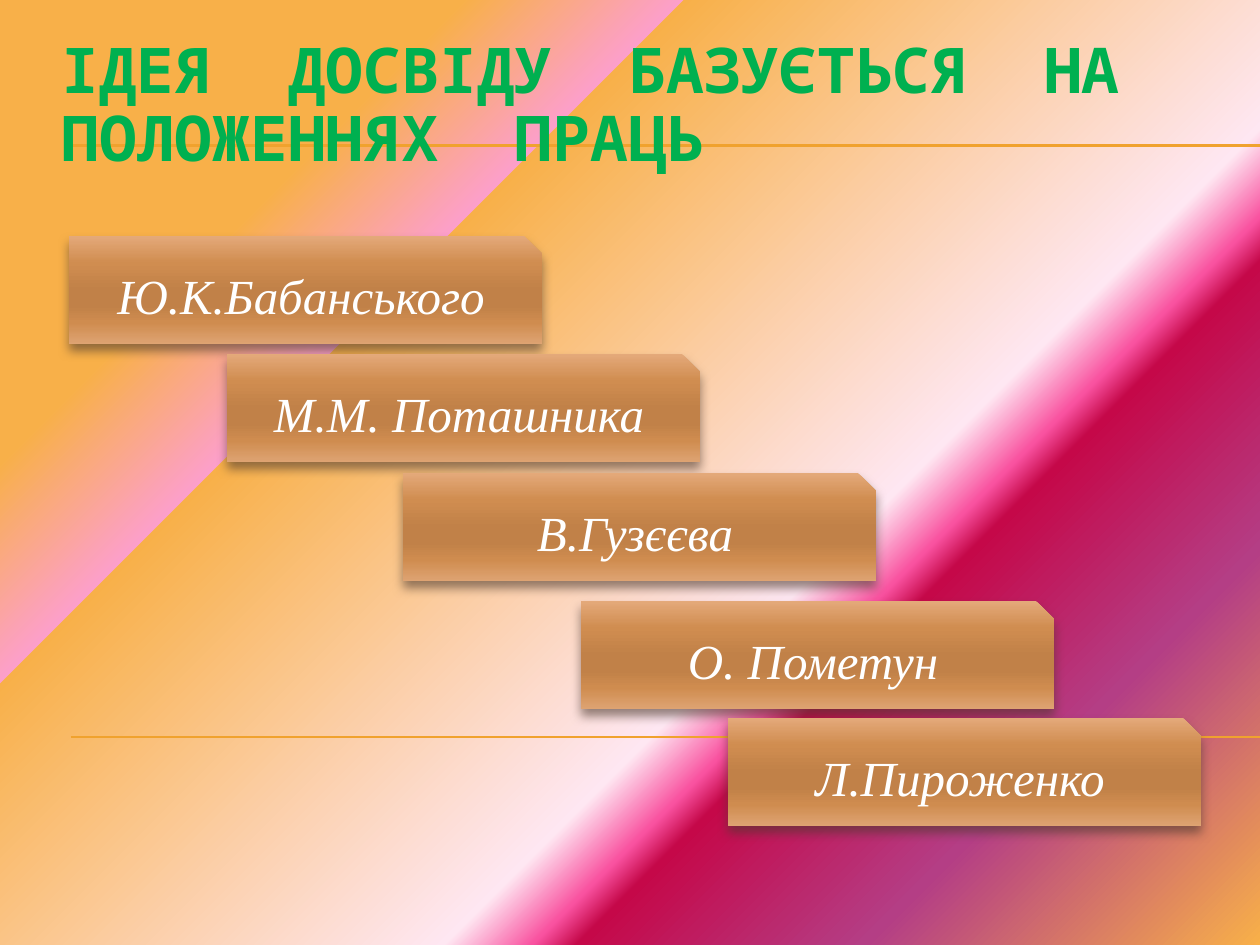
from dataclasses import dataclass

from lxml.etree import SubElement
from pptx import Presentation
from pptx.dml.color import RGBColor as Rgb
from pptx.enum.shapes import MSO_CONNECTOR as Link, MSO_SHAPE as Form
from pptx.enum.text import MSO_ANCHOR as Anchor, PP_ALIGN as Align
from pptx.oxml.ns import qn
from pptx.util import Emu, Pt


@dataclass(frozen=True)
class Theme:
    """Colours, fonts and type sizes of the slide."""
    head: str = "00B050"
    name: str = "FFFFFF"
    rule: str = "F0A22E"
    shade: str = "4E3B30"
    mono: str = "Noto Sans Mono"
    serif: str = "Times New Roman"
    big: int = 36
    mid: int = 28
    back: tuple = ((0, "F8B049"), (21, "F8B049"), (31, "FC9FCB"),
                   (31, "F8B049"), (63, "FEE7F2"), (67, "F952A0"),
                   (69, "C50849"), (82, "B43E85"), (100, "F8B049"))
    wood: tuple = ((0, "E4A97A"), (25, "D08D50"), (50, "C18148"),
                   (65, "C18148"), (80, "CF8C4F"), (100, "DEA372"))


def px(num):
    """Turn px into EMU."""
    return Emu(round(num * 914400 / 126))


def blend(fill, root, stops, angle):
    """Give a fill a linear gradient, its angle counted clockwise."""
    fill.gradient()
    fill.gradient_angle = 360 - angle
    rack = root.xpath(".//a:gradFill/a:gsLst")[0]
    for old in list(rack):
        rack.remove(old)
    for pos, tint in stops:
        stop = SubElement(rack, qn("a:gs"), pos=str(pos * 1000))
        SubElement(stop, qn("a:srgbClr"), val=tint)


def write(frame, text, *, font, size, color, bold=False, italic=False,
          align=Align.LEFT, anchor=Anchor.TOP, space=1.0):
    """Put one formatted paragraph in a text frame."""
    frame.word_wrap = True
    frame.vertical_anchor = anchor
    para = frame.paragraphs[0]
    para.alignment, para.line_spacing = align, space
    run = para.add_run()
    run.text = text
    face = run.font
    face.name, face.size, face.bold, face.italic = font, Pt(size), bold, italic
    face.color.rgb = Rgb.from_string(color)


class Deck:
    """Hold the theme and the current slide."""

    def __init__(self, theme, wide, high):
        """Open a blank slide of the given size."""
        self.theme = theme
        self.file = Presentation()
        self.file.slide_width, self.file.slide_height = px(wide), px(high)
        self.slide = self.file.slides.add_slide(self.file.slide_layouts[6])
        self.shapes = self.slide.shapes

    def ground(self):
        """Paint the background."""
        blend(self.slide.background.fill, self.slide.element,
              self.theme.back, 45)

    def rule(self, left, right, top):
        """Draw a level line."""
        line = self.shapes.add_connector(
            Link.STRAIGHT, px(left), px(top), px(right), px(top))
        line.line.color.rgb = Rgb.from_string(self.theme.rule)
        line.line.width = Pt(0.75)
        SubElement(line.element.spPr, qn("a:effectLst"))

    def title(self, text, *area):
        """Add the heading."""
        frame = self.shapes.add_textbox(*map(px, area)).text_frame
        frame.margin_top = px(10)
        write(frame, text, font=self.theme.mono, size=self.theme.big,
              color=self.theme.head, bold=True, space=0.9)

    def plank(self, text, *area):
        """Add a wooden plank with a name on it."""
        shape = self.shapes.add_shape(Form.SNIP_1_RECTANGLE, *map(px, area))
        blend(shape.fill, shape.element, self.theme.wood, 90)
        shape.line.fill.background()
        self.shadow(shape)
        write(shape.text_frame, text, font=self.theme.serif,
              size=self.theme.mid, color=self.theme.name, italic=True,
              align=Align.CENTER, anchor=Anchor.MIDDLE)

    def shadow(self, shape):
        """Cast a soft shadow straight down."""
        shape.shadow.inherit = False
        cast = SubElement(
            shape.element.spPr.find(qn("a:effectLst")), qn("a:outerShdw"),
            blurRad=str(Pt(6)), dist=str(Pt(4)), dir="5400000",
            rotWithShape="0")
        tint = SubElement(cast, qn("a:srgbClr"), val=self.theme.shade)
        SubElement(tint, qn("a:alpha"), val="60000")

    def save(self):
        """Write the file."""
        self.file.save("out.pptx")


def main():
    """Build the slide."""
    deck = Deck(Theme(), 1260, 945)
    deck.ground()
    for top in (145, 146, 737):
        deck.rule(71, 1260, top)
    deck.title("ІДЕЯ  ДОСВІДУ  БАЗУЄТЬСЯ  НА ПОЛОЖЕННЯХ  ПРАЦЬ",
               49, 29, 1162, 203)
    names = (("Ю.К.Бабанського", 69, 236), ("М.М. Поташника", 227, 354),
             ("В.Гузєєва", 403, 473), ("О. Пометун", 581, 601),
             ("Л.Пироженко", 728, 718))
    for name, left, top in names:
        deck.plank(name, left, top, 473, 108)
    deck.save()


if __name__ == "__main__":
    main()
